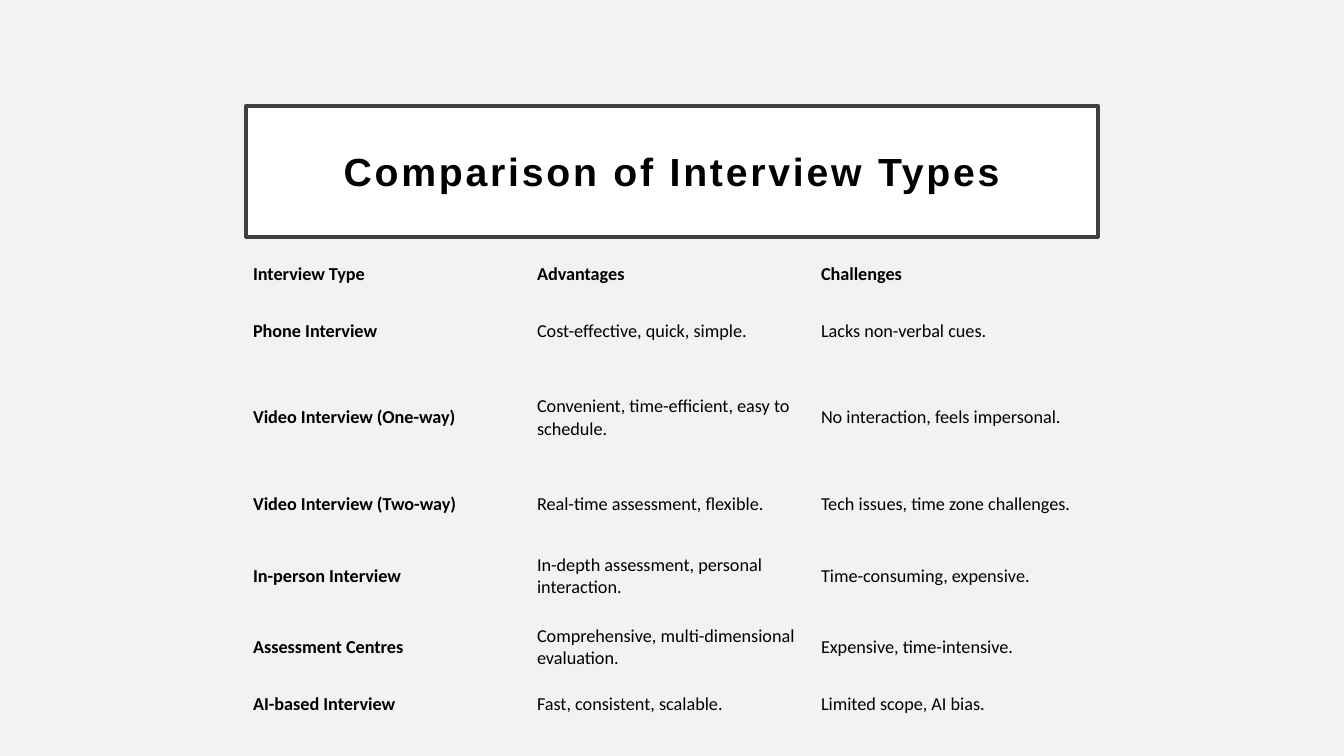
from dataclasses import dataclass

from pptx import Presentation
from pptx.dml.color import RGBColor as RGB
from pptx.enum.shapes import MSO_SHAPE as Kind
from pptx.enum.text import MSO_ANCHOR as Anchor, PP_ALIGN as Align
from pptx.oxml.ns import qn
from pptx.util import Inches, Pt


@dataclass(frozen=True)
class Theme:
    back: RGB = RGB(0xF2, 0xF2, 0xF2)
    panel: RGB = RGB(0xFF, 0xFF, 0xFF)
    edge: RGB = RGB(0x40, 0x40, 0x40)
    ink: RGB = RGB(0, 0, 0)
    head: Pt = Pt(28)
    body: Pt = Pt(13)


THEME = Theme()
PLAIN = "{2D5ABB26-0587-4C30-8999-92F81FD0307C}"
LEFT, WIDTH = Inches(2.44), Inches(8.45)
HIGH = [0.41, 0.71, 1.01, 0.71, 0.71, 0.71, 0.41]
TYPES = [
    ("Interview Type", "Advantages", "Challenges"),
    ("Phone Interview", "Cost-effective, quick, simple.", "Lacks non-verbal cues."),
    ("Video Interview (One-way)", "Convenient, time-efficient, easy to schedule.",
     "No interaction, feels impersonal."),
    ("Video Interview (Two-way)", "Real-time assessment, flexible.",
     "Tech issues, time zone challenges."),
    ("In-person Interview", "In-depth assessment, personal interaction.",
     "Time-consuming, expensive."),
    ("Assessment Centres", "Comprehensive, multi-dimensional evaluation.",
     "Expensive, time-intensive."),
    ("AI-based Interview", "Fast, consistent, scalable.", "Limited scope, AI bias."),
]


def style(item, form):
    for key, value in form.items():
        setattr(item, key, value)


def write(frame, text, face, size, bold):
    para = frame.paragraphs[0]
    run = para.add_run()
    run.text = text
    style(run.font, {"name": face, "size": size, "bold": bold})
    run.font.color.rgb = THEME.ink
    return para, run


def add_title(slide, text):
    box = slide.shapes.add_shape(Kind.RECTANGLE, LEFT, Inches(1.05), WIDTH, Inches(1.3))
    box.shadow.inherit = False
    box.fill.solid()
    box.fill.fore_color.rgb = THEME.panel
    box.line.color.rgb = THEME.edge
    box.line.width = Pt(2.5)
    pad = Inches(0.2)
    style(box.text_frame, {
        "word_wrap": True, "vertical_anchor": Anchor.MIDDLE,
        "margin_left": pad, "margin_right": pad,
        "margin_top": pad, "margin_bottom": pad,
    })
    para, run = write(box.text_frame, text, "Arial", THEME.head, True)
    para.alignment = Align.CENTER
    run.font._element.set("spc", "200")


def add_grid(slide, rows):
    frame = slide.shapes.add_table(
        len(rows), len(rows[0]), LEFT, Inches(2.52), WIDTH, Inches(sum(HIGH)))
    table = frame.table
    style(table, {"first_row": False, "horz_banding": False})
    table._tbl.tblPr.find(qn("a:tableStyleId")).text = PLAIN
    side, edge = Inches(0.07), Inches(0.04)
    form = {
        "vertical_anchor": Anchor.MIDDLE,
        "margin_left": side, "margin_right": side,
        "margin_top": edge, "margin_bottom": edge,
    }
    for r, (row, high) in enumerate(zip(rows, HIGH)):
        table.rows[r].height = Inches(high)
        for c, text in enumerate(row):
            cell = table.cell(r, c)
            style(cell, form)
            cell.fill.background()
            write(cell.text_frame, text, "Calibri", THEME.body, r == 0 or c == 0)


def main():
    deck = Presentation()
    style(deck, {"slide_width": Inches(13.33), "slide_height": Inches(7.5)})
    slide = deck.slides.add_slide(deck.slide_layouts[6])
    slide.background.fill.solid()
    slide.background.fill.fore_color.rgb = THEME.back
    add_title(slide, "Comparison of Interview Types")
    add_grid(slide, TYPES)
    deck.save("out.pptx")


if __name__ == "__main__":
    main()
